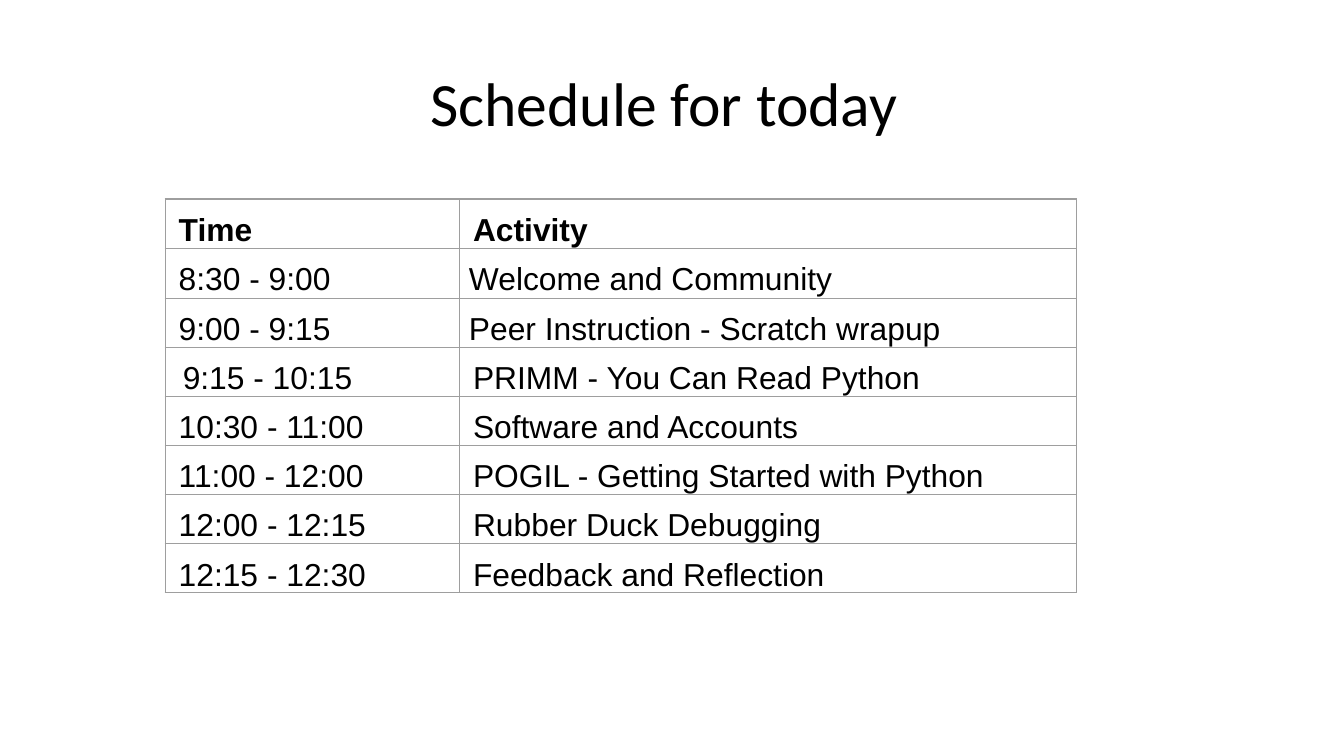
from dataclasses import dataclass

from lxml import etree
from pptx import Presentation
from pptx.dml.color import RGBColor
from pptx.enum import text
from pptx.oxml import ns
from pptx.util import Inches, Pt


@dataclass(frozen=True)
class Theme:
    ink: str = "000000"
    rule: str = "9E9E9E"
    head: str = "Calibri"
    body: str = "Arial"
    big: float = 33
    small: float = 17
    line: float = 0.75


THEME = Theme()
WIDE = 10
ROWS = [
    ("Time", "Activity"),
    ("8:30 - 9:00", "Welcome and Community"),
    ("9:00 - 9:15", "Peer Instruction - Scratch wrapup"),
    ("9:15 - 10:15", "PRIMM - You Can Read Python"),
    ("10:30 - 11:00", "Software and Accounts"),
    ("11:00 - 12:00", "POGIL - Getting Started with Python"),
    ("12:00 - 12:15", "Rubber Duck Debugging"),
    ("12:15 - 12:30", "Feedback and Reflection"),
]
WIDTHS = (2.19, 4.59)
HEIGHTS = [0.37] * 2 + [0.34] * (len(ROWS) - 2)
INSET = 0.1
# Cells whose text starts off the common left inset
SHIFTS = {(1, 1): 0.07, (2, 1): 0.07, (3, 0): 0.13}


def apply(item, values):
    for name, value in values.items():
        setattr(item, name, value)


def style(para, face, size, bold=False):
    apply(para.font, {"name": face, "size": Pt(size), "bold": bold})
    para.font.color.rgb = RGBColor.from_string(THEME.ink)


def add_title(slide, words):
    title = slide.shapes.title
    apply(title, {"left": Inches(3.03), "top": Inches(0.32),
                  "width": Inches(3.82), "height": Inches(0.94)})
    frame = title.text_frame
    frame.text = words
    apply(frame, {"margin_left": Inches(0.07), "margin_right": Inches(0.07),
                  "margin_top": Inches(0.04), "margin_bottom": Inches(0.04),
                  "vertical_anchor": text.MSO_ANCHOR.MIDDLE,
                  "auto_size": text.MSO_AUTO_SIZE.NONE, "word_wrap": True})
    para = frame.paragraphs[0]
    apply(para, {"alignment": text.PP_ALIGN.CENTER, "line_spacing": 0.9})
    style(para, THEME.head, THEME.big)


def add_rules(cell):
    """Draw all four borders; they must come before the cell's fill."""
    props = cell._tc.get_or_add_tcPr()
    for i, side in enumerate(("lnL", "lnR", "lnT", "lnB")):
        line = etree.Element(ns.qn(f"a:{side}"), w=str(Pt(THEME.line)))
        fill = etree.SubElement(line, ns.qn("a:solidFill"))
        etree.SubElement(fill, ns.qn("a:srgbClr"), val=THEME.rule)
        props.insert(i, line)


def fill_cell(cell, words, left, bold):
    cell.text = words
    apply(cell, {"margin_left": Inches(left), "margin_right": Inches(INSET),
                 "margin_top": Inches(INSET), "margin_bottom": 0,
                 "vertical_anchor": text.MSO_ANCHOR.TOP})
    style(cell.text_frame.paragraphs[0], THEME.body, THEME.small, bold)
    cell.fill.background()
    add_rules(cell)


def add_schedule(slide):
    frame = slide.shapes.add_table(
        len(ROWS), len(WIDTHS), Inches(1.23), Inches(1.48),
        Inches(sum(WIDTHS)), Inches(sum(HEIGHTS)))
    table = frame.table
    apply(table, {"first_row": False, "horz_banding": False})
    for col, width in zip(table.columns, WIDTHS):
        col.width = Inches(width)
    for r, (row, height) in enumerate(zip(ROWS, HEIGHTS)):
        table.rows[r].height = Inches(height)
        for c, words in enumerate(row):
            left = SHIFTS.get((r, c), INSET)
            fill_cell(table.cell(r, c), words, left, bold=r == 0)


def main():
    deck = Presentation()
    apply(deck, {"slide_width": Inches(WIDE),
                 "slide_height": Inches(WIDE * 9 / 16)})
    slide = deck.slides.add_slide(deck.slide_layouts[5])
    add_title(slide, "Schedule for today")
    add_schedule(slide)
    deck.save("out.pptx")


if __name__ == "__main__":
    main()
